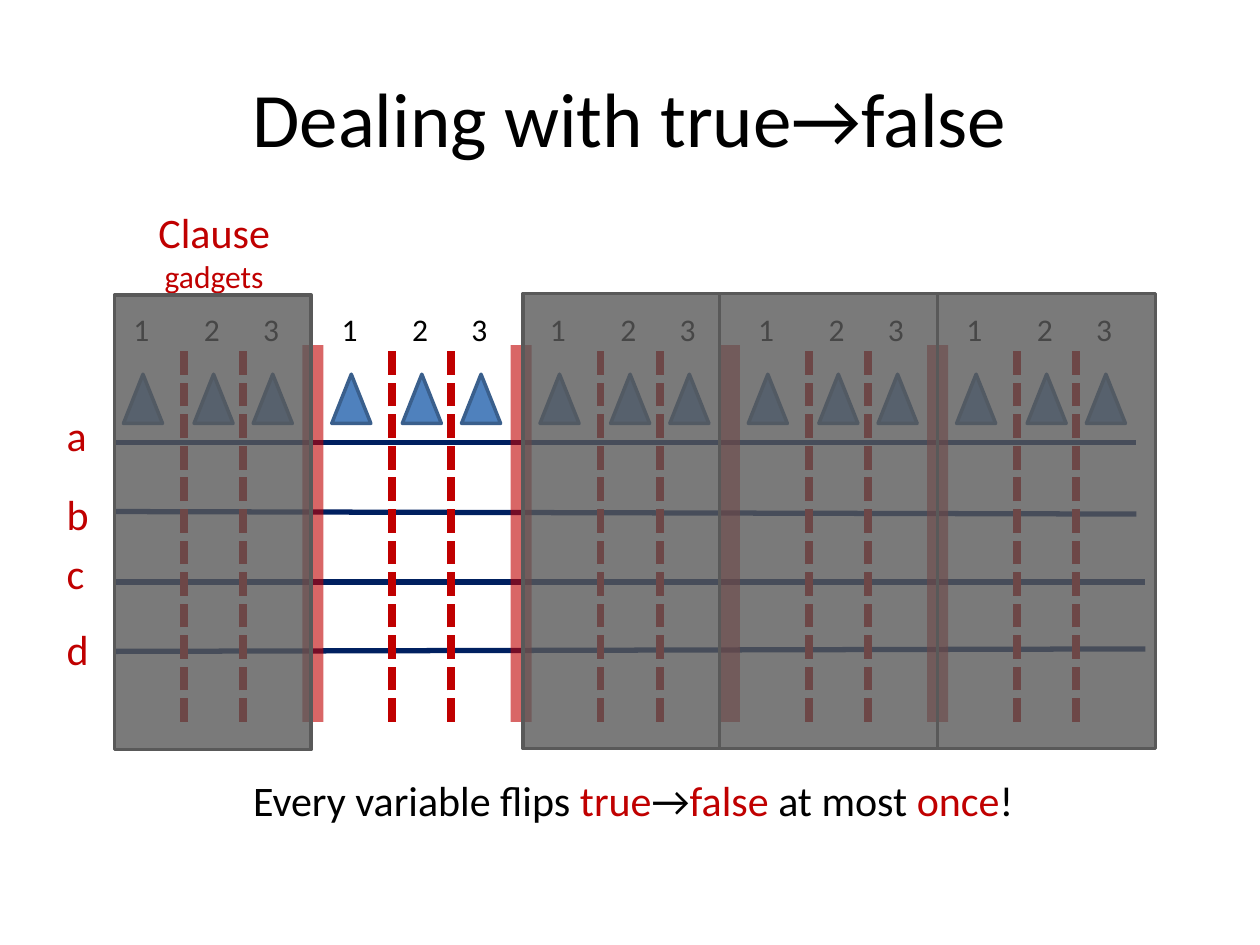
from dataclasses import dataclass

from pptx import Presentation
from pptx import util as u
from pptx.dml.color import RGBColor
from pptx.enum import dml, shapes, text
from pptx.oxml.ns import qn
from lxml import etree


@dataclass(frozen=True)
class Theme:
    font: str = "Calibri"
    black: str = "000000"
    red: str = "C00000"
    navy: str = "002060"
    blue: str = "4F81BD"
    blue_edge: str = "3A5F8C"
    gray: str = "595959"
    title_size: int = 44
    body_size: int = 24
    small_size: int = 18


class SlideBuilder:
    def __init__(self, slide, theme):
        self.slide = slide
        self.theme = theme

    def add_group(self):
        return self.slide.shapes.add_group_shape()

    def add_text(self, box, paragraphs, align=text.PP_ALIGN.LEFT, parent=None,
                 wrap=False, anchor=text.MSO_ANCHOR.TOP):
        """Each paragraph is (size, [(wording, colour), ...])."""
        shape = (parent or self.slide).shapes.add_textbox(*map(u.Inches, box))
        frame = shape.text_frame
        frame.word_wrap = wrap
        frame.vertical_anchor = anchor
        for index, (size, runs) in enumerate(paragraphs):
            paragraph = frame.add_paragraph() if index else frame.paragraphs[0]
            paragraph.alignment = align
            for wording, color in runs:
                run = paragraph.add_run()
                run.text = wording
                run.font.name = self.theme.font
                run.font.size = u.Pt(size)
                run.font.color.rgb = RGBColor.from_string(color)

    def add_line(self, start, end, color, width, dash=None, opacity=None, parent=None):
        line = (parent or self.slide).shapes.add_connector(
            shapes.MSO_CONNECTOR.STRAIGHT, *map(u.Inches, (*start, *end)))
        line.line.color.rgb = RGBColor.from_string(color)
        line.line.width = u.Pt(width)
        if dash:
            line.line.dash_style = dash
        if opacity:
            self.set_opacity(line, opacity)
        properties = line._element.spPr
        etree.SubElement(properties, qn("a:effectLst"))

    def add_shape(self, kind, box, fill, edge, opacity=None, parent=None):
        shape = (parent or self.slide).shapes.add_shape(kind, *map(u.Inches, box))
        shape.shadow.inherit = False
        shape.fill.solid()
        shape.fill.fore_color.rgb = RGBColor.from_string(fill)
        if opacity:
            self.set_opacity(shape, opacity)
        shape.line.color.rgb = RGBColor.from_string(edge)
        shape.line.width = u.Pt(2)

    @staticmethod
    def set_opacity(shape, percent):
        color = next(shape._element.spPr.iter(qn("a:srgbClr")))
        etree.SubElement(color, qn("a:alpha"), val=str(percent * 1000))


# Layout of the gadget grid
GADGET_COUNT, GADGET_STEP = 5, 1.653
GADGET_LEFT = 0.98
SLOT_OFFSETS = (0, 0.56, 1.03)
DASH_OFFSETS = (0.48, 0.95)
LINE_TOP, LINE_BOTTOM = 2.74, 5.73


def add_gadget(builder, left):
    theme = builder.theme
    group = builder.add_group()
    for offset in DASH_OFFSETS:
        builder.add_line((left + offset, LINE_BOTTOM), (left + offset, LINE_TOP),
                         theme.red, 4.5, dash=dml.MSO_LINE.SQUARE_DOT, parent=group)
    for number, offset in enumerate(SLOT_OFFSETS, start=1):
        x = left + offset
        builder.add_shape(shapes.MSO_SHAPE.ISOSCELES_TRIANGLE, (x, 2.97, 0.31, 0.39),
                          theme.blue, theme.blue_edge, parent=group)
        builder.add_text((x - 0.02, 2.41, 0.33, 0.4),
                         [(theme.small_size, [(str(number), theme.black)])], parent=group)


def main():
    theme = Theme()
    presentation = Presentation()
    presentation.slide_width = u.Inches(10)
    presentation.slide_height = u.Inches(7.5)
    slide = presentation.slides.add_slide(presentation.slide_layouts[6])
    builder = SlideBuilder(slide, theme)
    center = text.PP_ALIGN.CENTER

    # Title
    builder.add_text((0.5, 0.3, 9, 1.25),
                     [(theme.title_size, [("Dealing with true→false", theme.black)])],
                     center, wrap=True, anchor=text.MSO_ANCHOR.MIDDLE)

    # Variable lines and their names
    variables = [
        ("a", 3.2, 0.36, 3.51, 3.51, 9.02),
        ("b", 3.83, 0.38, 4.06, 4.08, 9.02),
        ("c", 4.3, 0.34, 4.62, 4.62, 9.09),
        ("d", 4.9, 0.38, 5.17, 5.15, 9.09),
    ]
    for name, label_top, label_width, start_y, end_y, end_x in variables:
        builder.add_line((0.91, start_y), (end_x, end_y), theme.navy, 3)
        builder.add_text((0.43, label_top, label_width, 0.5),
                         [(theme.body_size, [(name, theme.red)])])

    # Heading of the clause gadgets
    builder.add_text((1.15, 1.59, 1.1, 0.81),
                     [(theme.body_size, [("Clause", theme.red)]),
                      (theme.small_size, [("gadgets", theme.red)])], center)

    # Clause gadgets with separators between them
    for index in range(GADGET_COUNT):
        left = GADGET_LEFT + index * GADGET_STEP
        if index:
            separator = left - 0.15
            builder.add_line((separator, LINE_BOTTOM), (separator, LINE_TOP),
                             theme.red, 12, opacity=60)
        add_gadget(builder, left)

    # Conclusion
    conclusion = [("Every variable flips ", theme.black), ("true", theme.red),
                  ("→", theme.black), ("false ", theme.red), ("at most ", theme.black),
                  ("once", theme.red), ("!", theme.black)]
    builder.add_text((1.91, 6.1, 6.32, 0.5), [(theme.body_size, conclusion)])

    # Covers over all gadgets but the second
    for left, top, width in [(0.91, 2.34, 1.56), (4.15, 2.33, 1.56),
                             (5.71, 2.33, 1.73), (7.44, 2.33, 1.73)]:
        builder.add_shape(shapes.MSO_SHAPE.RECTANGLE, (left, top, width, 3.61),
                          theme.gray, theme.gray, opacity=80)

    presentation.save("out.pptx")


if __name__ == "__main__":
    main()
